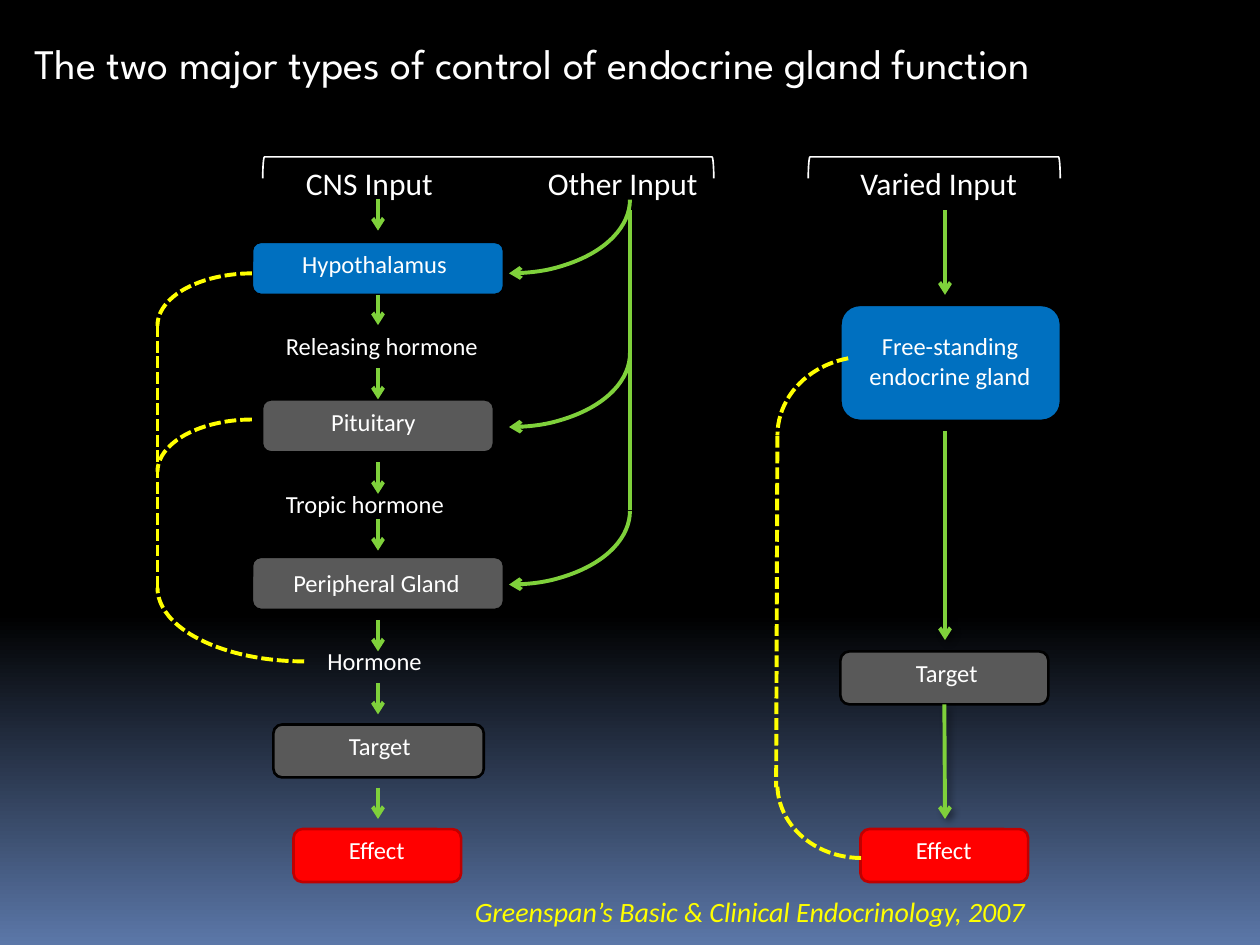
"""Build a slide comparing the two major types of endocrine gland control."""
from lxml.etree import SubElement
from pptx import Presentation
from pptx.dml.color import RGBColor
from pptx.enum.dml import MSO_LINE
from pptx.enum.shapes import MSO_CONNECTOR, MSO_SHAPE
from pptx.enum.text import MSO_ANCHOR, MSO_AUTO_SIZE, PP_ALIGN
from pptx.oxml.ns import qn
from pptx.util import Inches, Pt

BLACK = RGBColor(0x00, 0x00, 0x00)
WHITE = RGBColor(0xFF, 0xFF, 0xFF)
BLUE = RGBColor(0x00, 0x70, 0xC0)
GRAY = RGBColor(0x59, 0x59, 0x59)
RED = RGBColor(0xFF, 0x00, 0x00)
DARK_RED = RGBColor(0xC0, 0x00, 0x00)
GREEN = RGBColor(0x7F, 0xD1, 0x3B)
YELLOW = RGBColor(0xFF, 0xFF, 0x00)
SLATE = RGBColor(0x5B, 0x77, 0xA8)

TITLE = "The two major types of control of endocrine gland function"
SOURCE = "Greenspan’s Basic & Clinical Endocrinology, 2007"

BOXES = {
    "hypothalamus": (2, 1.92, 2, 0.42, BLUE, BLACK),
    "pituitary": (2.08, 3.17, 1.84, 0.42, GRAY, BLACK),
    "peripheral gland": (2, 4.42, 2, 0.42, GRAY, BLACK),
    "target": (2.17, 5.75, 1.67, 0.42, GRAY, BLACK),
    "effect": (2.33, 6.58, 1.33, 0.42, RED, DARK_RED),
    "free-standing gland": (6.67, 2.42, 1.75, 0.92, BLUE, BLACK),
    "free-standing target": (6.67, 5.17, 1.65, 0.42, GRAY, BLACK),
    "free-standing effect": (6.83, 6.58, 1.33, 0.42, RED, DARK_RED),
}
INPUTS = [
    ("CNS Input", 2.33, 1.25, 1.75, 0.42),
    ("Other Input", 4.25, 1.25, 1.75, 0.42),
    ("Varied Input", 6.73, 1.25, 2.08, 0.42),
]
LABELS = [
    ("Hypothalamus", 2.3, 1.93, 1.83, 0.34),
    ("Releasing hormone", 2.17, 2.58, 2.25, 0.34),
    ("Pituitary", 2.53, 3.18, 1.42, 0.34),
    ("Tropic hormone", 2.17, 3.83, 2.25, 0.34),
    ("Peripheral Gland", 2.23, 4.46, 2, 0.34),
    ("Hormone", 2.5, 5.08, 1.67, 0.34),
    ("Target", 2.67, 5.75, 0.92, 0.34),
    ("Effect", 2.67, 6.58, 1.08, 0.33),
    ("Target", 7.17, 5.17, 0.92, 0.34),
    ("Effect", 7.17, 6.58, 1.08, 0.33),
]
BRACKETS = [(3.79, -0.46, 0.17, 3.58), (7.33, 0.33, 0.17, 2)]
CASCADE_X, CASCADE_STEP = 3, 0.25
CASCADE_ARROWS = [
    (1.58, None, "hypothalamus"),
    (2.33, "hypothalamus", None),
    (2.92, None, "pituitary"),
    (3.67, None, None),
    (4.12, None, None),
    (4.92, None, None),
    (5.42, None, None),
    (6.25, None, None),
]
FREE_X = 7.5
FREE_ARROWS = [
    (1.67, 2.34, None),
    (3.42, 5.08, None),
    (5.6, 6.5, "free-standing target"),
]
INPUT_ARC_TOPS = [1, 2.22, 3.47]
FEEDBACK_LINES = [(1.25, 2.58, 1.25, 4.67), (6.17, 3.46, 6.16, 6.25)]
FEEDBACK_ARCS = [
    (1.25, 4.08, 2.33, 1.17, True, None),
    (1.25, 3.33, 1.5, 0.83, False, None),
    (1.25, 2.17, 1.5, 0.83, False, None),
    (6.17, 5.64, 1.33, 1.17, True, None),
    (6.17, 2.83, 1.42, 1.25, False, 170.19),
]


def style_line(shape, color, width=2.25, dashed=False, arrow_end=None):
    shape.line.color.rgb = color
    shape.line.width = Pt(width)
    if dashed:
        shape.line.dash_style = MSO_LINE.SQUARE_DOT
    if arrow_end:
        outline = shape._element.spPr.find(qn("a:ln"))
        SubElement(outline, qn(f"a:{arrow_end}")).set("type", "arrow")


def add_shape(slide, kind, bounds):
    shape = slide.shapes.add_shape(kind, *map(Inches, bounds))
    shape.shadow.inherit = False
    shape.fill.background()
    return shape


def add_arc(slide, bounds, color, flip_h=False, flip_v=False, start=None, **line):
    arc = add_shape(slide, MSO_SHAPE.ARC, bounds)
    if start is not None:
        arc.adjustments[0] = start
    for name, flipped in (("flipH", flip_h), ("flipV", flip_v)):
        if flipped:
            arc._element.spPr.xfrm.set(name, "1")
    style_line(arc, color, **line)


def add_line(slide, points, color, shadow=False, **line):
    connector = slide.shapes.add_connector(MSO_CONNECTOR.STRAIGHT, *map(Inches, points))
    style_line(connector, color, **line)
    effects = SubElement(connector._element.spPr, qn("a:effectLst"))
    if shadow:
        outer = SubElement(effects, qn("a:outerShdw"), blurRad=str(Pt(4)),
                           dist=str(Pt(3)), dir="2700000", algn="tl", rotWithShape="0")
        shade = SubElement(outer, qn("a:srgbClr"), val=str(BLACK))
        SubElement(shade, qn("a:alpha"), val="40000")
    return connector


def format_text(shape, text, size, font="Calibri", color=WHITE, italic=None,
                align=PP_ALIGN.LEFT):
    frame = shape.text_frame
    frame.text = text
    frame.word_wrap = True
    frame.auto_size = MSO_AUTO_SIZE.SHAPE_TO_FIT_TEXT
    frame.vertical_anchor = MSO_ANCHOR.TOP
    paragraph = frame.paragraphs[0]
    paragraph.alignment = align
    run_font = paragraph.runs[0].font
    run_font.name, run_font.size, run_font.italic = font, Pt(size), italic
    run_font.color.rgb = color


def add_text(slide, bounds, text, size, **style):
    format_text(slide.shapes.add_textbox(*map(Inches, bounds)), text, size, **style)


def set_background(slide):
    fill = slide.background.fill
    fill.gradient()
    fill.gradient_angle = 270
    for stop, position, color in zip(fill.gradient_stops, (0.65, 1), (BLACK, SLATE)):
        stop.position = position
        stop.color.rgb = color


def main():
    presentation = Presentation()
    presentation.slide_width, presentation.slide_height = Inches(10), Inches(7.5)
    slide = presentation.slides.add_slide(presentation.slide_layouts[5])
    set_background(slide)

    title = slide.shapes.title
    title.left, title.top, title.width, title.height = map(Inches, (0.17, 0.25, 9.75, 0.51))
    format_text(title, TITLE, 24, font="League Spartan")

    boxes = {}
    for name, (*bounds, fill, outline) in BOXES.items():
        box = add_shape(slide, MSO_SHAPE.ROUNDED_RECTANGLE, bounds)
        box.fill.solid()
        box.fill.fore_color.rgb = fill
        style_line(box, outline, 1.5)
        boxes[name] = box

    for bounds in BRACKETS:
        bracket = add_shape(slide, MSO_SHAPE.RIGHT_BRACKET, bounds)
        bracket.rotation = 270
        style_line(bracket, WHITE, 0.94)

    for top, above, below in CASCADE_ARROWS:
        points = (CASCADE_X, top, CASCADE_X, top + CASCADE_STEP)
        arrow = add_line(slide, points, GREEN, arrow_end="tailEnd")
        if above:
            arrow.begin_connect(boxes[above], 2)
        if below and abs(Inches(points[3]) - boxes[below].top) < Inches(0.03):
            arrow.end_connect(boxes[below], 0)
    for top, bottom, above in FREE_ARROWS:
        arrow = add_line(slide, (FREE_X, top, FREE_X, bottom), GREEN,
                         shadow=True, arrow_end="tailEnd")
        if above:
            arrow.begin_connect(boxes[above], 2)

    add_line(slide, (5, 1.67, 5, 4.05), GREEN)
    for top in INPUT_ARC_TOPS:
        add_arc(slide, (3.08, top, 1.92, 1.17), GREEN, flip_v=True, arrow_end="headEnd")

    for points in FEEDBACK_LINES:
        add_line(slide, points, YELLOW, dashed=True)
    for *bounds, flip_v, start in FEEDBACK_ARCS:
        add_arc(slide, bounds, YELLOW, True, flip_v, start, dashed=True)

    for labels, size in ((INPUTS, 18), (LABELS, 14)):
        for text, *bounds in labels:
            add_text(slide, bounds, text, size)
    add_text(slide, (6.75, 2.58, 1.58, 0.57), "Free-standing endocrine gland", 14,
             align=PP_ALIGN.CENTER)
    add_text(slide, (3.67, 7.05, 5.17, 0.37), SOURCE, 16, color=YELLOW, italic=True)
    presentation.save("out.pptx")


if __name__ == "__main__":
    main()
